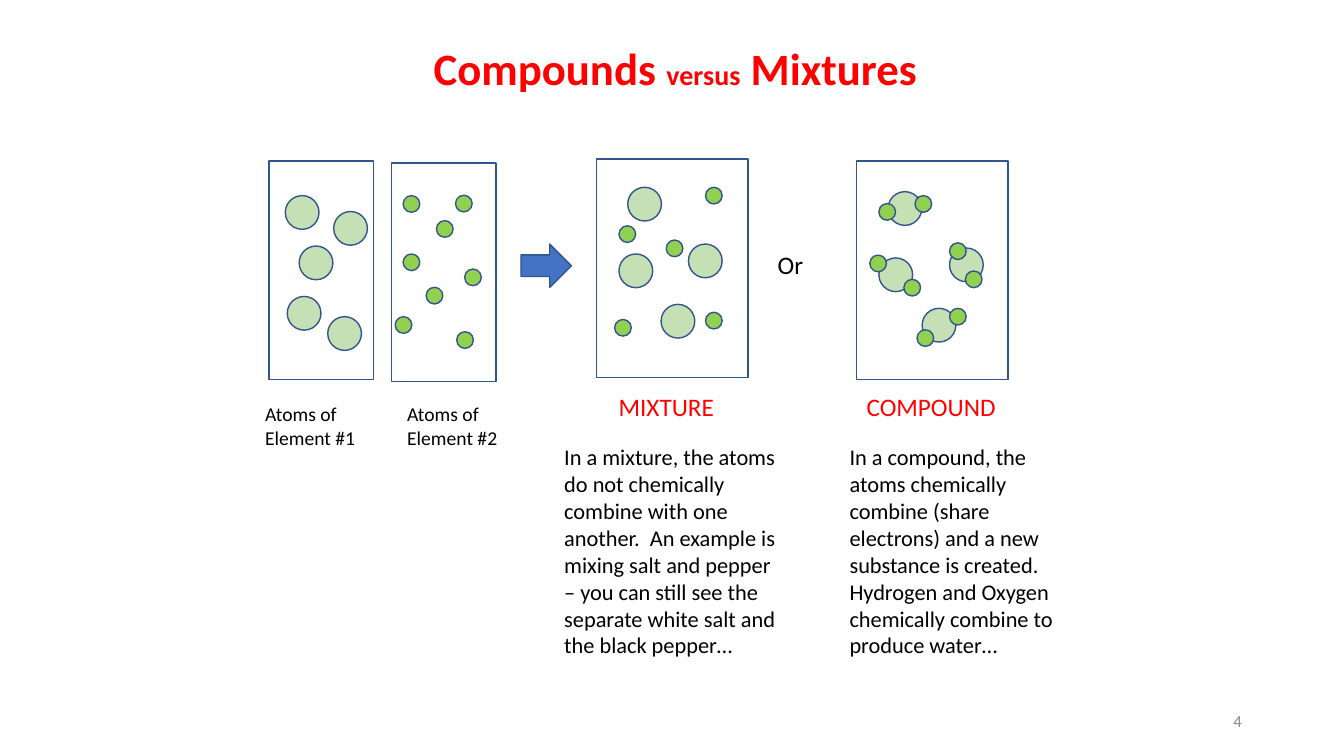
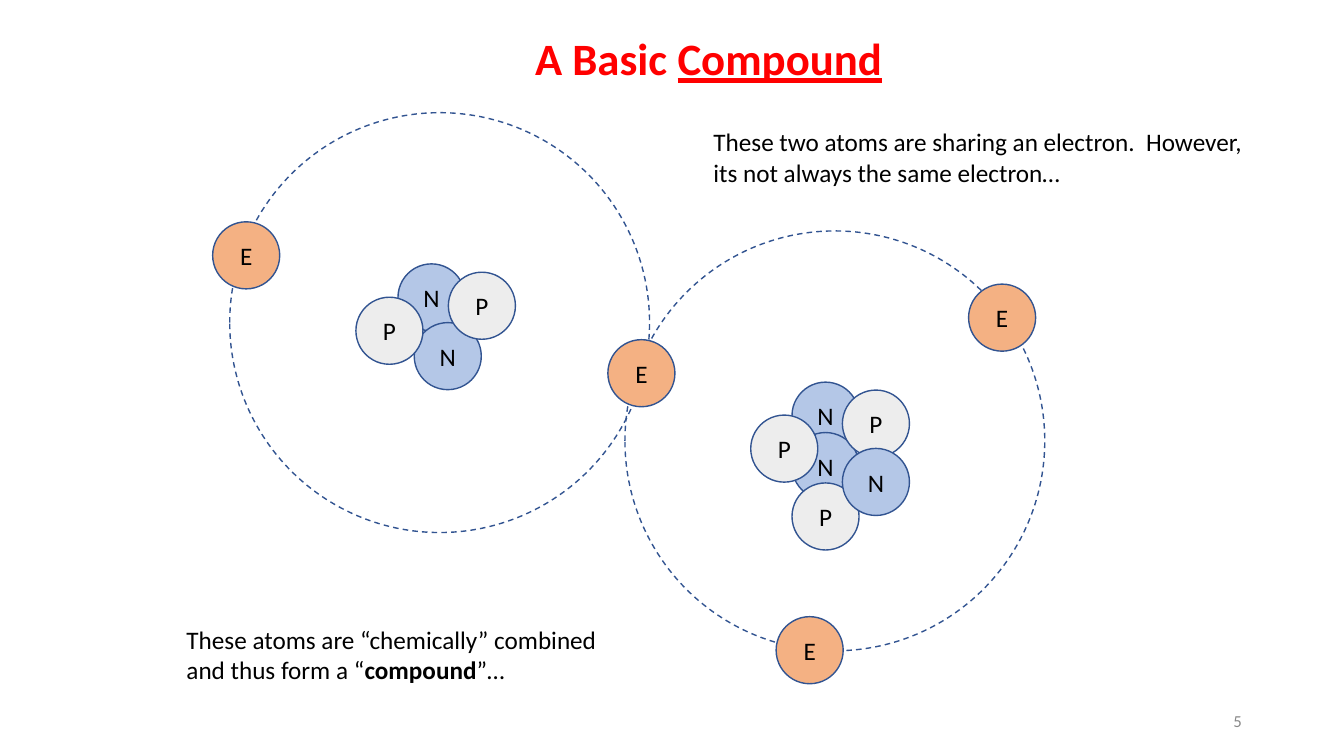
from dataclasses import dataclass

from pptx import Presentation
from pptx.dml.color import RGBColor
from pptx.enum.dml import MSO_LINE
from pptx.enum.shapes import MSO_SHAPE
from pptx.enum.text import MSO_ANCHOR, PP_ALIGN
from pptx.shapes.autoshape import Shape
from pptx.slide import Slide
from pptx.util import Cm, Pt

RECTANGLE, OVAL, RIGHT_ARROW = MSO_SHAPE.RECTANGLE, MSO_SHAPE.OVAL, MSO_SHAPE.RIGHT_ARROW
LEFT, CENTER, RIGHT = PP_ALIGN.LEFT, PP_ALIGN.CENTER, PP_ALIGN.RIGHT
TOP, MIDDLE = MSO_ANCHOR.TOP, MSO_ANCHOR.MIDDLE
DASH = MSO_LINE.DASH

FONT = "Calibri"
COLORS = {
    "title": "FF0000",
    "text": "000000",
    "number": "898989",
    "outline": "325491",
    "arrow": "4472C4",
    "large_atom": "C5E0B4",
    "small_atom": "92D050",
    "neutron": "B4C7E7",
    "proton": "EDEDED",
    "electron": "F4B183",
}

Point = tuple[float, float]


@dataclass(frozen=True)
class Box:
    """A place on the slide, in centimetres."""
    left: float
    top: float
    width: float
    height: float

    def lengths(self) -> tuple[Cm, Cm, Cm, Cm]:
        return Cm(self.left), Cm(self.top), Cm(self.width), Cm(self.height)


@dataclass(frozen=True)
class Run:
    text: str
    size: int | None = None
    bold: bool | None = None
    underline: bool | None = None


@dataclass(frozen=True)
class TextStyle:
    size: int
    color: str = "text"
    align: PP_ALIGN = LEFT
    anchor: MSO_ANCHOR = TOP
    bold: bool = False
    line_spacing: float = 1.0


@dataclass(frozen=True)
class Label:
    box: Box
    text: str
    style: TextStyle


@dataclass(frozen=True)
class Panel:
    """A container with the top left corners of its atoms."""
    box: Box
    large_atoms: tuple[Point, ...] = ()
    small_atoms: tuple[Point, ...] = ()


@dataclass(frozen=True)
class Particle:
    kind: str
    left: float
    top: float


TITLE = TextStyle(32, "title", CENTER, MIDDLE, bold=True, line_spacing=0.9)
NUMBER = TextStyle(12, "number", RIGHT, MIDDLE)
CAPTION = TextStyle(14)
HEADING = TextStyle(18, "title")
EXPLANATION = TextStyle(16)
BODY = TextStyle(18)
PARTICLE_LETTER = TextStyle(18, align=CENTER, anchor=MIDDLE)

NUMBER_BOX = Box(23.93, 17.65, 7.62, 1.02)
LARGE_ATOM_SIZE = 0.85
SMALL_ATOM_SIZE = 0.42
PARTICLE_SIZE = 1.69
ORBIT_SIZE = 10.58
PANEL_HEIGHT = 5.51
ELEMENT_WIDTH = 2.64
RESULT_WIDTH = 3.81

PANELS = (
    Panel(
        Box(6.78, 4.06, ELEMENT_WIDTH, PANEL_HEIGHT),
        large_atoms=((7.19, 4.93), (7.54, 6.2), (8.41, 5.33), (8.26, 7.98), (7.24, 7.47)),
    ),
    Panel(
        Box(9.86, 4.11, ELEMENT_WIDTH, PANEL_HEIGHT),
        small_atoms=((10.16, 4.93), (11, 5.56), (10.16, 6.4), (10.74, 7.24),
                     (11.48, 4.92), (9.96, 7.98), (11.71, 6.78), (11.51, 8.36)),
    ),
    Panel(
        Box(15.04, 4.01, RESULT_WIDTH, PANEL_HEIGHT),
        large_atoms=((15.82, 4.72), (17.35, 6.15), (16.66, 7.67), (15.6, 6.4)),
        small_atoms=((15.6, 5.69), (16.79, 6.05), (15.49, 8.05), (17.78, 4.72), (17.78, 7.87)),
    ),
    Panel(
        Box(21.59, 4.06, RESULT_WIDTH, PANEL_HEIGHT),
        large_atoms=((22.38, 4.83), (23.93, 6.25), (23.24, 7.77), (22.15, 6.5)),
        small_atoms=((22.15, 5.13), (23.93, 6.12), (21.92, 6.43), (23.06, 4.93),
                     (24.33, 6.83), (22.78, 7.04), (23.11, 8.31), (23.93, 7.77)),
    ),
)

LABELS = (
    Label(Box(6.43, 10.01, 3.23, 1.45), "Atoms of Element #1", CAPTION),
    Label(Box(10.01, 10.01, 3.12, 1.45), "Atoms of Element #2", CAPTION),
    Label(Box(15.34, 9.73, 3.18, 1.02), "MIXTURE", HEADING),
    Label(Box(21.59, 9.73, 3.81, 1.02), "COMPOUND", HEADING),
    Label(
        Box(13.97, 11.05, 5.92, 5.74),
        "In a mixture, the atoms do not chemically combine with one another.  "
        "An example is mixing salt and pepper – you can still see the separate "
        "white salt and the black pepper…",
        EXPLANATION,
    ),
    Label(
        Box(21.16, 11.05, 5.92, 5.74),
        "In a compound, the atoms chemically combine (share electrons) and a new "
        "substance is created.  Hydrogen and Oxygen chemically combine to produce water…",
        EXPLANATION,
    ),
    Label(Box(19.35, 6.15, 1.57, 1.07), "Or", BODY),
)

ORBITS: tuple[Point, ...] = ((15.75, 5.82), (5.79, 2.84))
PARTICLES = (
    Particle("neutron", 10.03, 6.65),
    Particle("neutron", 10.44, 8.13),
    Particle("proton", 11.3, 6.86),
    Particle("proton", 8.97, 7.49),
    Particle("electron", 15.32, 8.56),
    Particle("electron", 5.36, 5.59),
    Particle("neutron", 19.96, 9.63),
    Particle("neutron", 19.96, 10.9),
    Particle("proton", 21.23, 9.83),
    Particle("proton", 18.92, 10.46),
    Particle("electron", 24.41, 7.16),
    Particle("proton", 19.96, 12.17),
    Particle("neutron", 21.23, 11.3),
    Particle("electron", 19.56, 15.54),
)


def rgb(name: str) -> RGBColor:
    return RGBColor.from_string(COLORS[name])


def write(shape: Shape, runs: tuple[Run, ...], style: TextStyle) -> None:
    frame = shape.text_frame
    frame.word_wrap = True
    frame.vertical_anchor = style.anchor
    paragraph = frame.paragraphs[0]
    paragraph.alignment = style.align
    paragraph.line_spacing = style.line_spacing
    paragraph.font.name = FONT
    paragraph.font.size = Pt(style.size)
    paragraph.font.bold = style.bold
    paragraph.font.color.rgb = rgb(style.color)
    for part in runs:
        run = paragraph.add_run()
        run.text = part.text
        if part.size is not None:
            run.font.size = Pt(part.size)
        if part.bold is not None:
            run.font.bold = part.bold
        if part.underline is not None:
            run.font.underline = part.underline


def add_text(slide: Slide, box: Box, style: TextStyle, *runs: Run) -> None:
    write(slide.shapes.add_textbox(*box.lengths()), runs, style)


def add_outlined(slide: Slide, kind: MSO_SHAPE, box: Box, fill: str | None = None) -> Shape:
    """Add a preset shape with the common outline; no fill name leaves it clear."""
    shape = slide.shapes.add_shape(kind, *box.lengths())
    shape.shadow.inherit = False
    shape.line.color.rgb = rgb("outline")
    shape.line.width = Pt(1)
    if fill is None:
        shape.fill.background()
    else:
        shape.fill.solid()
        shape.fill.fore_color.rgb = rgb(fill)
    return shape


def add_circle(slide: Slide, corner: Point, size: float, fill: str | None = None) -> Shape:
    return add_outlined(slide, OVAL, Box(*corner, size, size), fill)


def add_panel(slide: Slide, panel: Panel) -> None:
    add_outlined(slide, RECTANGLE, panel.box)
    for corner in panel.large_atoms:
        add_circle(slide, corner, LARGE_ATOM_SIZE, "large_atom")
    for corner in panel.small_atoms:
        add_circle(slide, corner, SMALL_ATOM_SIZE, "small_atom")


def add_particle(slide: Slide, particle: Particle) -> None:
    shape = add_circle(slide, (particle.left, particle.top), PARTICLE_SIZE, particle.kind)
    frame = shape.text_frame
    frame.margin_left = frame.margin_right = frame.margin_top = frame.margin_bottom = 0
    write(shape, (Run(particle.kind[0].upper()),), PARTICLE_LETTER)


def add_titled_slide(presentation: Presentation, number: int, box: Box, *title: Run) -> Slide:
    slide = presentation.slides.add_slide(presentation.slide_layouts[6])
    add_text(slide, NUMBER_BOX, NUMBER, Run(str(number)))
    add_text(slide, box, TITLE, *title)
    return slide


def build_comparison(presentation: Presentation) -> None:
    slide = add_titled_slide(
        presentation, 4, Box(5.59, 0.58, 22.86, 2.41),
        Run("Compounds "), Run("versus", size=20), Run(" Mixtures"),
    )
    for panel in PANELS:
        add_panel(slide, panel)
    for label in LABELS:
        add_text(slide, label.box, label.style, Run(label.text))
    add_outlined(slide, RIGHT_ARROW, Box(13.13, 6.15, 1.27, 1.09), "arrow")


def build_compound(presentation: Presentation) -> None:
    slide = add_titled_slide(
        presentation, 5, Box(6.43, 0.66, 22.86, 1.78),
        Run("A Basic "), Run("Compound", underline=True),
    )
    for corner in ORBITS:
        add_circle(slide, corner, ORBIT_SIZE).line.dash_style = DASH
    for particle in PARTICLES:
        add_particle(slide, particle)
    add_text(
        slide, Box(17.73, 3.07, 14.43, 1.8), BODY,
        Run("These two atoms are sharing an electron.  However, "
            "its not always the same electron…"),
    )
    add_text(
        slide, Box(4.45, 15.6, 11.23, 1.8), BODY,
        Run("These atoms are “chemically” combined and thus form a “"),
        Run("compound", bold=True), Run("”…"),
    )


def main() -> None:
    presentation = Presentation()
    presentation.slide_width = Cm(33.87)
    presentation.slide_height = Cm(19.05)
    build_comparison(presentation)
    build_compound(presentation)
    presentation.save("out.pptx")


if __name__ == "__main__":
    main()
